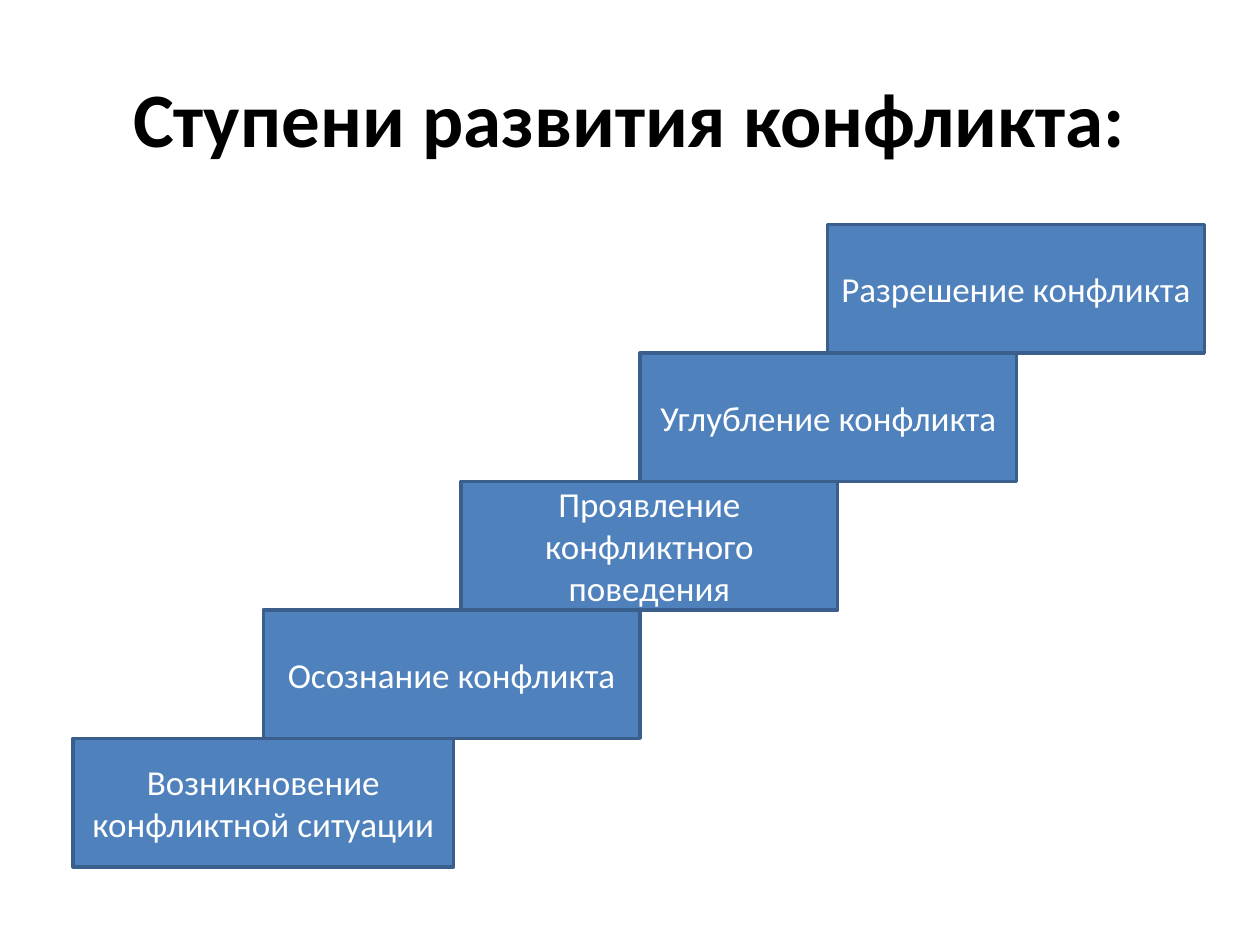
from dataclasses import dataclass

from pptx import Presentation
from pptx.dml.color import RGBColor
from pptx.enum.shapes import MSO_SHAPE
from pptx.enum.text import MSO_ANCHOR, PP_ALIGN
from pptx.util import Pt


@dataclass(frozen=True)
class Theme:
    font: str = "Calibri"
    title_size: int = 44
    step_size: int = 20
    title_color: RGBColor = RGBColor(0x00, 0x00, 0x00)
    step_text: RGBColor = RGBColor(0xFF, 0xFF, 0xFF)
    step_fill: RGBColor = RGBColor(0x4F, 0x81, 0xBD)
    step_line: RGBColor = RGBColor(0x3A, 0x5F, 0x8C)
    line_width: int = 2


THEME = Theme()

# Stairs from the bottom up: text, left edge, width
STEPS = [
    ("Возникновение конфликтной ситуации", 41.8, 217.4),
    ("Осознание конфликта", 150.5, 215.2),
    ("Проявление конфликтного поведения", 263.5, 215.2),
    ("Углубление конфликта", 365.8, 215.2),
    ("Разрешение конфликта", 473, 215.2),
]
BOTTOM_STEP_TOP = 421.9
STEP_HEIGHT = 73.4


def write_centered(text_frame, text, size, color, bold=False):
    text_frame.word_wrap = True
    text_frame.vertical_anchor = MSO_ANCHOR.MIDDLE
    paragraph = text_frame.paragraphs[0]
    paragraph.text = text
    paragraph.alignment = PP_ALIGN.CENTER
    font = paragraph.font
    font.name = THEME.font
    font.size = Pt(size)
    font.bold = bold
    font.color.rgb = color


def add_title(slide, text):
    title = slide.shapes.title
    title.left, title.top, title.width, title.height = Pt(36), Pt(21.6), Pt(648), Pt(90)
    write_centered(title.text_frame, text, THEME.title_size, THEME.title_color, bold=True)


def add_step(slide, text, left, top, width):
    shape = slide.shapes.add_shape(
        MSO_SHAPE.FLOWCHART_PROCESS, Pt(left), Pt(top), Pt(width), Pt(STEP_HEIGHT)
    )
    shape.shadow.inherit = False
    shape.fill.solid()
    shape.fill.fore_color.rgb = THEME.step_fill
    shape.line.color.rgb = THEME.step_line
    shape.line.width = Pt(THEME.line_width)
    write_centered(shape.text_frame, text, THEME.step_size, THEME.step_text)


def main():
    presentation = Presentation()
    presentation.slide_width = Pt(720)
    presentation.slide_height = Pt(540)
    title_only_layout = presentation.slide_layouts[5]
    slide = presentation.slides.add_slide(title_only_layout)

    add_title(slide, "Ступени развития конфликта:")
    for level, (text, left, width) in enumerate(STEPS):
        add_step(slide, text, left, BOTTOM_STEP_TOP - level * STEP_HEIGHT, width)

    presentation.save("out.pptx")


if __name__ == "__main__":
    main()
